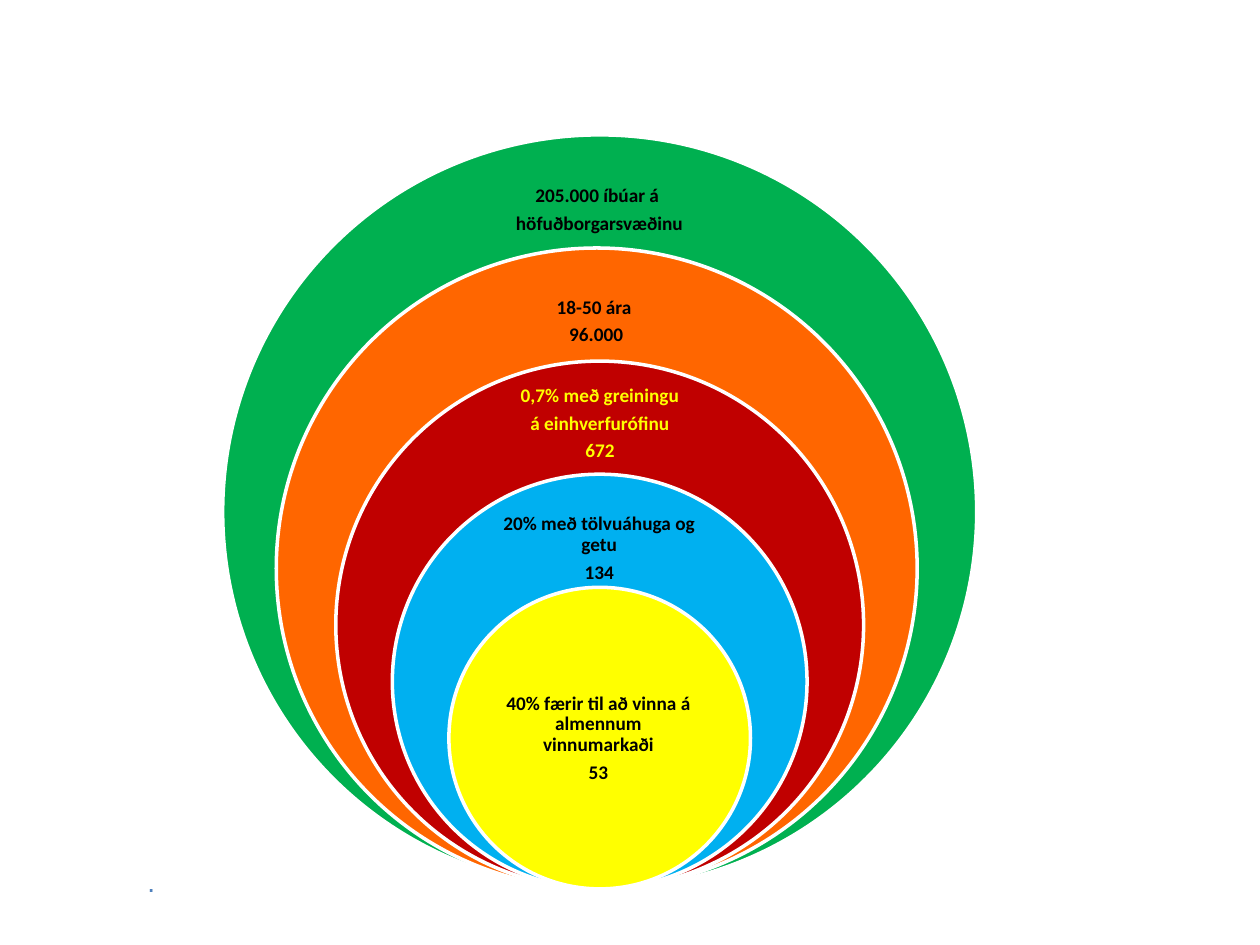
from pptx import Presentation
from pptx.dml.color import RGBColor
from pptx.enum import shapes, text
from pptx.util import Cm, Pt

WHITE = RGBColor(0xFF, 0xFF, 0xFF)
BLACK = RGBColor(0x00, 0x00, 0x00)
GREEN = RGBColor(0x00, 0xB0, 0x50)
ORANGE = RGBColor(0xFF, 0x66, 0x00)
RED = RGBColor(0xC0, 0x00, 0x00)
SKY = RGBColor(0x00, 0xB0, 0xF0)
YELLOW = RGBColor(0xFF, 0xFF, 0x00)
BLUE = RGBColor(0x4F, 0x81, 0xBD)

OUTER, STEP = 15.2, 2.28

# fill, text colour, centre shift, label (left, top, width, height), lines
RINGS = [
    (GREEN, BLACK, 0, (4.75, 0.76, 5.69, 1.52),
     ["205.000 íbúar á ", "höfuðborgarsvæðinu"]),
    (ORANGE, BLACK, -0.06, (4.75, 3.02, 5.56, 1.5), ["18-50 ára ", "96.000"]),
    (RED, YELLOW, 0, (4.85, 5.09, 5.51, 1.47),
     ["0,7% með greiningu", "á einhverfurófinu", "672"]),
    (SKY, BLACK, 0, (5.33, 7.59, 4.52, 1.5),
     ["20% með tölvuáhuga og getu", "134"]),
    (YELLOW, BLACK, 0, (5.43, 10.64, 4.29, 3.05),
     ["40% færir til að vinna á almennum vinnumarkaði", "53"]),
]


def add_text(slide, lines, left, top, width, height, *, font="Calibri", size=11,
             color=BLACK, bold=True, align=text.PP_ALIGN.CENTER,
             anchor=text.MSO_ANCHOR.MIDDLE, insets=(0.23, 0.23, 0.23, 0.23),
             spacing=0.9, after=3.85):
    """Add a text box with one paragraph per line."""
    tf = slide.shapes.add_textbox(Cm(left), Cm(top), Cm(width), Cm(height)).text_frame
    tf.word_wrap = True
    tf.vertical_anchor = anchor
    tf.margin_left, tf.margin_top, tf.margin_right, tf.margin_bottom = map(Cm, insets)
    for i, line in enumerate(lines):
        p = tf.paragraphs[0] if i == 0 else tf.add_paragraph()
        p.alignment = align
        p.line_spacing = spacing
        p.space_after = Pt(after)
        r = p.add_run()
        r.text = line
        r.font.name, r.font.size, r.font.bold = font, Pt(size), bold
        r.font.color.rgb = color


def add_circle(slide, left, top, diameter, fill):
    """Add a filled circle with a white outline."""
    sp = slide.shapes.add_shape(shapes.MSO_SHAPE.OVAL, Cm(left), Cm(top),
                                Cm(diameter), Cm(diameter))
    sp.shadow.inherit = False
    sp.fill.solid()
    sp.fill.fore_color.rgb = fill
    sp.line.color.rgb = WHITE
    sp.line.width = Pt(2)


def add_nested_circles(slide, left, top):
    """Stack the circles so that they share the lowest point."""
    for i, (fill, color, shift, (x, y, w, h), lines) in enumerate(RINGS):
        inset = i * STEP
        add_circle(slide, left + inset / 2 + shift, top + inset, OUTER - inset, fill)
        add_text(slide, lines, left + x, top + y, w, h, color=color)


def add_body(slide, left, top, width, height):
    """Add the body text, which rests on the bottom of its box."""
    add_text(slide, ["."], left, top, width, height, font="Arial", size=16,
             color=BLUE, bold=False, align=text.PP_ALIGN.LEFT,
             anchor=text.MSO_ANCHOR.BOTTOM, insets=(0.25, 0.13, 0.25, 0.36),
             spacing=1.0, after=0)


def main():
    """Build and save the slide."""
    prs = Presentation()
    prs.slide_width, prs.slide_height = Cm(25.4), Cm(19.05)
    slide = prs.slides.add_slide(prs.slide_layouts[6])
    add_body(slide, 2.72, 0, 22.68, 18.47)
    add_nested_circles(slide, 4.49, 2.72)
    prs.save("out.pptx")


if __name__ == "__main__":
    main()
